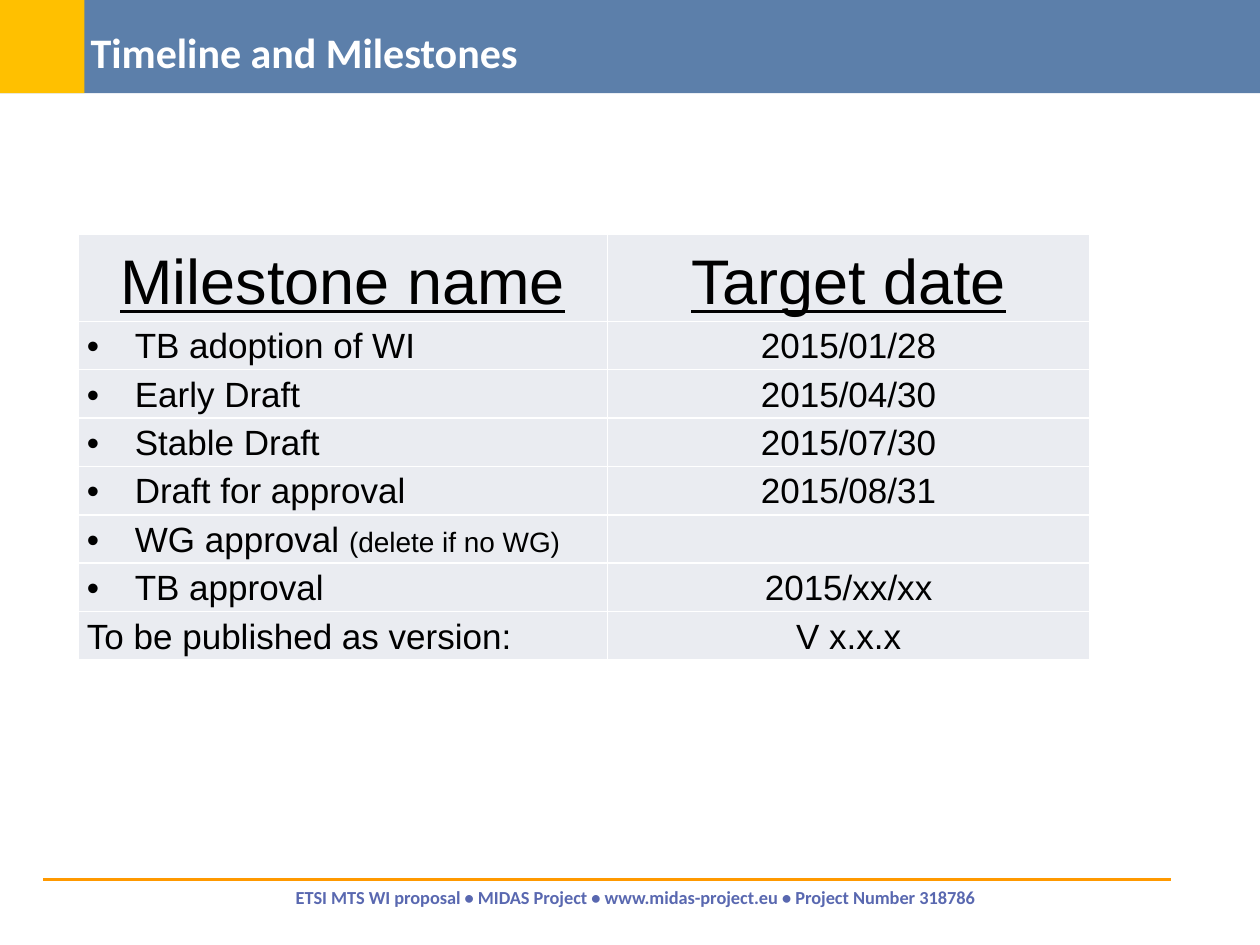
from lxml.etree import SubElement
from pptx import Presentation
from pptx.dml.color import RGBColor
from pptx.enum.shapes import MSO_CONNECTOR, MSO_SHAPE
from pptx.enum.text import MSO_ANCHOR, PP_ALIGN
from pptx.oxml.ns import qn
from pptx.util import Inches, Pt

BLUE = RGBColor(0x5C, 0x7F, 0xAA)
GOLD = RGBColor(0xFF, 0xC0, 0x00)
ORANGE = RGBColor(0xFF, 0x99, 0x00)
VIOLET = RGBColor(0x59, 0x68, 0xB0)
PALE = RGBColor(0xEA, 0xEC, 0xF1)
WHITE = RGBColor(0xFF, 0xFF, 0xFF)
BLACK = RGBColor(0x00, 0x00, 0x00)

HEADS = ["Milestone name", "Target date"]
STEPS = [
    (["TB adoption of WI"], "2015/01/28"),
    (["Early Draft"], "2015/04/30"),
    (["Stable Draft"], "2015/07/30"),
    (["Draft for approval"], "2015/08/31"),
    (["WG approval ", "(delete if no WG)"], ""),
    (["TB approval"], "2015/xx/xx"),
]
LAST = ("To be published as version:", "V x.x.x")
FOOTER = ("ETSI MTS WI proposal • MIDAS Project • www.midas-project.eu"
          " • Project Number 318786")


def add_run(para, text, size, color=BLACK, name="Arial", bold=False, line=False):
    run = para.add_run()
    run.text = text
    font = run.font
    font.name, font.size, font.bold, font.underline = name, Pt(size), bold, line
    font.color.rgb = color


def add_block(slide, x, y, w, h, color):
    block = slide.shapes.add_shape(
        MSO_SHAPE.RECTANGLE, Inches(x), Inches(y), Inches(w), Inches(h))
    block.shadow.inherit = False
    block.fill.solid()
    block.fill.fore_color.rgb = color
    block.line.fill.background()


def add_label(slide, x, y, w, h, text, size, color, wrap=True):
    box = slide.shapes.add_textbox(Inches(x), Inches(y), Inches(w), Inches(h))
    box.text_frame.word_wrap = wrap
    para = box.text_frame.paragraphs[0]
    add_run(para, text, size, color, "Calibri", True)
    return para


def add_header(slide, x, y, w, h):
    add_block(slide, x, y, w, h, BLUE)
    add_block(slide, x, y, 0.67, h, GOLD)
    add_label(slide, x + 0.62, y + 0.16, w - 0.62, 0.51,
              "Timeline and Milestones", 24, WHITE)


def add_footer(slide, x, y, w):
    rule = slide.shapes.add_connector(
        MSO_CONNECTOR.STRAIGHT, Inches(x + w), Inches(y), Inches(x), Inches(y))
    rule.line.color.rgb = ORANGE
    rule.line.width = Pt(1.5)
    SubElement(rule._element.spPr, qn("a:effectLst"))
    para = add_label(slide, x + 1.84, y, 5.73, 0.28, FOOTER, 10.5, VIOLET, False)
    para.alignment = PP_ALIGN.CENTER


def style_cell(cell):
    """Give the cell its insets, white borders and pale fill."""
    cell.margin_left = cell.margin_right = Inches(0.07)
    cell.margin_top = cell.margin_bottom = 0
    props = cell._tc.get_or_add_tcPr()
    for side in ("lnL", "lnR", "lnT", "lnB"):
        edge = SubElement(props, qn(f"a:{side}"), w=str(Pt(1)))
        paint = SubElement(edge, qn("a:solidFill"))
        SubElement(paint, qn("a:srgbClr"), val=str(WHITE))
    cell.fill.solid()
    cell.fill.fore_color.rgb = PALE


def set_marks(para, bullet):
    """Add the tab stop, and the bullet with its hanging indent if wanted."""
    props = para._p.get_or_add_pPr()
    if bullet:
        props.set("marL", str(Inches(0.38)))
        props.set("indent", str(Inches(-0.38)))
        SubElement(props, qn("a:buFont"), typeface="Arial")
        SubElement(props, qn("a:buChar"), char="•")
    tabs = SubElement(props, qn("a:tabLst"))
    SubElement(tabs, qn("a:tab"), pos=str(Inches(0.26)), algn="l")


def fill_name(cell, parts, bullet):
    para = cell.text_frame.paragraphs[0]
    set_marks(para, bullet)
    para.line_spacing = 1.15
    for text, size in zip(parts, (20, 16)):
        add_run(para, text, size)


def fill_mid(cell, text, size, line=False):
    para = cell.text_frame.paragraphs[0]
    para.alignment = PP_ALIGN.CENTER
    para.line_spacing = 1.15
    if text:
        add_run(para, text, size, line=line)
    else:
        para.font.size = Pt(size)


def add_plan(slide, x, y, widths, head, step):
    rows = [(parts, date, True) for parts, date in STEPS]
    rows.append(([LAST[0]], LAST[1], False))
    frame = slide.shapes.add_table(
        len(rows) + 1, len(widths), Inches(x), Inches(y),
        Inches(sum(widths)), Inches(head + step * len(rows)))
    table = frame.table
    table.first_row = table.horz_banding = False
    for col, width in zip(table.columns, widths):
        col.width = Inches(width)
    for row in table.rows:
        row.height = Inches(step)
    table.rows[0].height = Inches(head)
    for cell in table.iter_cells():
        style_cell(cell)
    for i, text in enumerate(HEADS):
        cell = table.cell(0, i)
        cell.vertical_anchor = MSO_ANCHOR.MIDDLE
        fill_mid(cell, text, 36, True)
    for i, (parts, date, bullet) in enumerate(rows, 1):
        fill_name(table.cell(i, 0), parts, bullet)
        fill_mid(table.cell(i, 1), date, 20)


def main():
    deck = Presentation()
    deck.slide_width, deck.slide_height = Inches(10), Inches(7.5)
    slide = deck.slides.add_slide(deck.slide_layouts[6])
    add_header(slide, 0, 0, 10, 0.74)
    add_footer(slide, 0.34, 6.98, 8.95)
    add_plan(slide, 0.62, 1.86, (4.2, 3.83), 0.64, 0.35)
    deck.save("out.pptx")


if __name__ == "__main__":
    main()
